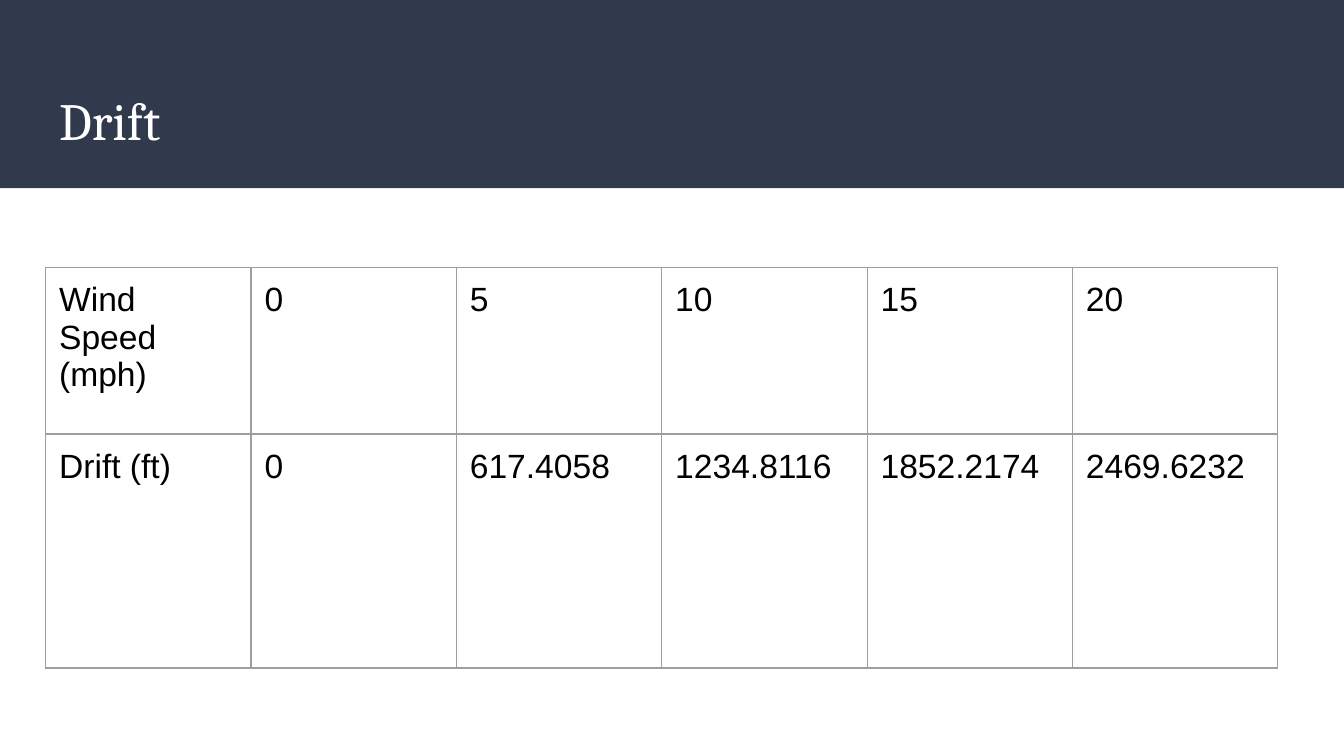
from dataclasses import dataclass

from lxml import etree
from pptx import Presentation
from pptx.dml.color import RGBColor
from pptx.enum import shapes, text
from pptx.oxml import ns
from pptx.util import Inches, Pt


@dataclass(frozen=True)
class Theme:
    band: str = "31394D"
    title: str = "FFFFFF"
    body: str = "000000"
    border: str = "9E9E9E"
    background: str = "FFFFFF"
    title_font: str = "Cambria"
    body_font: str = "Arial"
    title_size: float = 28
    body_size: float = 18
    border_width: float = 0.75
    inset: float = 0.1


class SlideBuilder:
    def __init__(self, prs, theme):
        self.theme = theme
        self.slide = prs.slides.add_slide(prs.slide_layouts[5])
        fill = self.slide.background.fill
        fill.solid()
        fill.fore_color.rgb = RGBColor.from_string(theme.background)

    def format_text(self, tf, font, size, color):
        for p in tf.paragraphs:
            p.alignment = text.PP_ALIGN.LEFT
            for r in p.runs:
                r.font.name = font
                r.font.size = Pt(size)
                r.font.color.rgb = RGBColor.from_string(color)

    def set_margins(self, target):
        inset = Inches(self.theme.inset)
        target.margin_left = target.margin_right = inset
        target.margin_top = target.margin_bottom = inset

    def band(self, left, top, width, height):
        sp = self.slide.shapes.add_shape(
            shapes.MSO_SHAPE.RECTANGLE,
            Inches(left), Inches(top), Inches(width), Inches(height))
        sp.shadow.inherit = False
        sp.fill.solid()
        sp.fill.fore_color.rgb = RGBColor.from_string(self.theme.band)
        sp.line.fill.background()
        self.slide.shapes._spTree.insert(2, sp._element)

    def title(self, wording, left, top, width, height):
        sp = self.slide.shapes.title
        sp.left, sp.top = Inches(left), Inches(top)
        sp.width, sp.height = Inches(width), Inches(height)
        tf = sp.text_frame
        tf.text = wording
        tf.word_wrap = True
        tf.auto_size = text.MSO_AUTO_SIZE.NONE
        tf.vertical_anchor = text.MSO_ANCHOR.MIDDLE
        self.set_margins(tf)
        self.format_text(tf, self.theme.title_font, self.theme.title_size,
                         self.theme.title)

    def cell_borders(self, cell):
        tc_pr = cell._tc.get_or_add_tcPr()
        for position, side in enumerate(("lnL", "lnR", "lnT", "lnB")):
            ln = etree.Element(ns.qn(f"a:{side}"),
                               w=str(Pt(self.theme.border_width)))
            fill = etree.SubElement(ln, ns.qn("a:solidFill"))
            etree.SubElement(fill, ns.qn("a:srgbClr"), val=self.theme.border)
            tc_pr.insert(position, ln)

    def table(self, rows, left, top, width, row_heights):
        columns = len(rows[0])
        table = self.slide.shapes.add_table(
            len(rows), columns, Inches(left), Inches(top),
            Inches(width), Inches(sum(row_heights))).table
        table.first_row = table.horz_banding = False
        for column in table.columns:
            column.width = Inches(width / columns)
        for row, height, values in zip(table.rows, row_heights, rows):
            row.height = Inches(height)
            for cell, value in zip(row.cells, values):
                cell.text_frame.text = value
                cell.vertical_anchor = text.MSO_ANCHOR.TOP
                cell.fill.background()
                self.set_margins(cell)
                self.cell_borders(cell)
                self.format_text(cell.text_frame, self.theme.body_font,
                                 self.theme.body_size, self.theme.body)


def main():
    prs = Presentation()
    prs.slide_width = Inches(10)
    prs.slide_height = Inches(10 * 9 / 16)
    builder = SlideBuilder(prs, Theme())
    builder.band(0, 0, 10, 1.4)
    builder.title("Drift", 0.34, 0.55, 9.32, 0.68)
    drift_rows = [
        ["Wind Speed (mph)", "0", "5", "10", "15", "20"],
        ["Drift (ft)", "0", "617.4058", "1234.8116", "1852.2174", "2469.6232"],
    ]
    builder.table(drift_rows, 0.34, 1.99, 9.17, [1.24, 1.74])
    prs.save("out.pptx")


if __name__ == "__main__":
    main()
